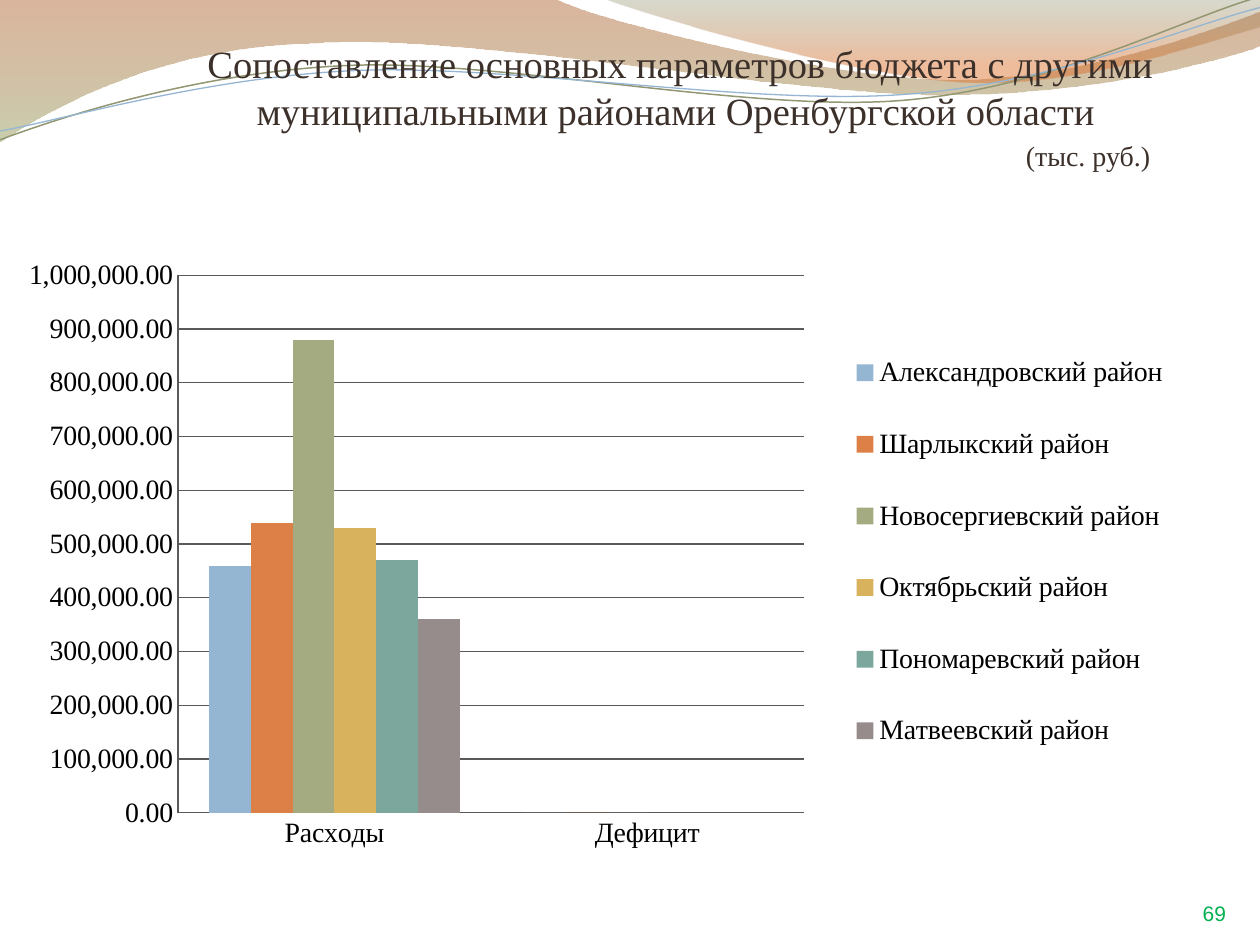
from lxml import etree
from pptx import Presentation
from pptx.chart.data import CategoryChartData
from pptx.dml.color import RGBColor
from pptx.enum.chart import XL_CHART_TYPE, XL_LEGEND_POSITION, XL_TICK_MARK
from pptx.enum.text import MSO_ANCHOR, PP_ALIGN
from pptx.oxml import parse_xml
from pptx.oxml.ns import qn
from pptx.util import Inches, Pt

COLUMN = XL_CHART_TYPE.COLUMN_CLUSTERED
RIGHT = XL_LEGEND_POSITION.RIGHT
NO_TICK = XL_TICK_MARK.NONE
BOTTOM = MSO_ANCHOR.BOTTOM
MID, END = PP_ALIGN.CENTER, PP_ALIGN.RIGHT
SERIF = "Times New Roman"

HEX = {
    "title": "3C302A", "page": "00B050", "text": "000000", "rule": "595959",
    "rust": "AF5C29", "moss": "9DA66B", "sage": "7D835B", "flame": "DD6B24",
    "olive": "929772", "sky": "94B6D2",
}

WAVES = [
    {"start": (0, 0), "segs": [
        (4.4, -0.01), (4.76, 0.17, 6.64, 0.63, 7.58, 0.63),
        (8.53, 0.63, 9.58, 0.26, 10, 0.09), (10.01, 0.36),
        (9.83, 0.44, 8.7, 0.76, 7.46, 0.75), (6.22, 0.75, 3.82, 0.28, 2.57, 0.34),
        (1.29, 0.36, 0.46, 0.83, -0.01, 1.13), (0, 0)],
     "grad": [(0, "rust", 45), (1, "moss", 55)]},
    {"start": (4.79, -0.01), "segs": [
        (5.09, 0.11, 6.82, 0.62, 7.69, 0.65), (8.56, 0.69, 9.61, 0.32, 10, 0.21),
        (10, 0), (4.79, -0.01)],
     "grad": [(0, "sage", 30), (0.8, "flame", 45)]},
    {"start": (0, 1.11), "segs": [
        (0.48, 0.93, 1.58, 0.57, 2.77, 0.52), (3.95, 0.47, 5.93, 0.89, 7.13, 0.8),
        (8.33, 0.71, 9.38, 0.15, 9.98, -0.02)],
     "line": ("olive", 0.85)},
    {"start": (0, 1.04), "segs": [
        (0.47, 0.96, 1.64, 0.61, 2.83, 0.56), (4.03, 0.51, 5.97, 0.84, 7.17, 0.75),
        (8.36, 0.67, 9.41, 0.21, 10, 0.06)],
     "line": ("sky", 0.75)},
]

TITLE = [
    ("Сопоставление основных параметров бюджета с другими "
     "муниципальными районами Оренбургской области ", 22, 26.5, 0),
    ("(тыс. руб.)", 16, 22.7, 6.47),
]
PAGE = "69"
CATS = ["Расходы", "Дефицит"]
ROWS = [
    ("Александровский район", (460000, 0), "94B6D2"),
    ("Шарлыкский район", (540000, 0), "DD8047"),
    ("Новосергиевский район", (880000, 0), "A5AB81"),
    ("Октябрьский район", (530000, None), "D8B25C"),
    ("Пономаревский район", (470000, None), "7BA79D"),
    ("Матвеевский район", (360000, None), "968C8C"),
]
PLOT = {"x": 0.122, "y": 0.03, "w": 0.532, "h": 0.827}
KEY = {"x": 0.679, "y": 0.094, "w": 0.3, "h": 0.723}


def put(item, vals):
    """Set attributes from a dict of format values."""
    for name, val in vals.items():
        setattr(item, name, val)


def paint(font, size, tone, face=SERIF):
    """Set the size, face and colour of a font."""
    put(font, {"size": Pt(size), "name": face, "bold": False})
    font.color.rgb = RGBColor.from_string(HEX[tone])


def place(item, box):
    """Set the place and size of a shape in inches."""
    put(item, dict(zip(("left", "top", "width", "height"), map(Inches, box))))


def bend(shape, segs):
    """Turn the straight steps of six-number segments into cubic curves."""
    steps = list(shape._element.iter(qn("a:lnTo")))
    for step, seg in zip(steps, segs):
        if len(seg) == 2:
            continue
        curve = etree.Element(qn("a:cubicBezTo"))
        for x, y in zip(seg[::2], seg[1::2]):
            etree.SubElement(curve, qn("a:pt"), x=str(Inches(x) - shape.left),
                             y=str(Inches(y) - shape.top))
        step.getparent().replace(step, curve)


def draw_wave(shapes, wave):
    """Draw one filled or stroked wave."""
    pen = shapes.build_freeform(*map(Inches, wave["start"]))
    ends = [tuple(map(Inches, seg[-2:])) for seg in wave["segs"]]
    pen.add_line_segments(ends, close="grad" in wave)
    shape = pen.convert_to_shape()
    bend(shape, wave["segs"])
    shape.shadow.inherit = False
    if "line" in wave:
        tone, width = wave["line"]
        shape.fill.background()
        shape.line.color.rgb = RGBColor.from_string(HEX[tone])
        shape.line.width = Pt(width)
        return
    shape.line.fill.background()
    shape.fill.gradient()
    shape.fill.gradient_angle = 270
    for stop, (pos, tone, _) in zip(shape.fill.gradient_stops, wave["grad"]):
        stop.position = pos
        stop.color.rgb = RGBColor.from_string(HEX[tone])
    marks = list(shape._element.spPr.iter(qn("a:srgbClr")))
    for mark, (_, _, alpha) in zip(marks, wave["grad"]):
        etree.SubElement(mark, qn("a:alpha"), val=str(alpha * 1000))


def lay_out(kind, spots):
    """Return a manual chart layout element."""
    inner = '<c:layoutTarget val="inner"/>' if kind == "inner" else ""
    modes = "".join(f'<c:{k}Mode val="edge"/>' for k in "xy")
    sizes = "".join(f'<c:{k} val="{v}"/>' for k, v in spots.items())
    return parse_xml(
        '<c:layout xmlns:c="http://schemas.openxmlformats.org/drawingml/2006/chart">'
        f"<c:manualLayout>{inner}{modes}{sizes}</c:manualLayout></c:layout>")


def add_bars(shapes):
    """Add the column chart with its axes and legend."""
    data = CategoryChartData(number_format="#,##0.00")
    data.categories = CATS
    for name, vals, _ in ROWS:
        data.add_series(name, vals)
    box = map(Inches, (0.23, 2.03, 9.38, 5.16))
    chart = shapes.add_chart(COLUMN, *box, data).chart
    put(chart, {"has_title": False, "has_legend": True})
    paint(chart.font, 18, "text", "TeX Gyre Pagella")
    plot = chart.plots[0]
    put(plot, {"gap_width": 150, "overlap": 0, "vary_by_categories": False})
    for bar, (_, _, tone) in zip(plot.series, ROWS):
        bar.format.fill.solid()
        bar.format.fill.fore_color.rgb = RGBColor.from_string(tone)
        bar.invert_if_negative = False
    cat, val = chart.category_axis, chart.value_axis
    put(val, {"minimum_scale": 0, "maximum_scale": 1000000, "major_unit": 100000,
              "has_major_gridlines": True})
    put(val.tick_labels, {"number_format": "#,##0.00",
                          "number_format_is_linked": False})
    for axis in (cat, val):
        put(axis, {"major_tick_mark": NO_TICK, "minor_tick_mark": NO_TICK})
        paint(axis.tick_labels.font, 16, "text")
    for rule in (cat.format, val.format, val.major_gridlines.format):
        rule.line.color.rgb = RGBColor.from_string(HEX["rule"])
        rule.line.width = Pt(0.75)
    key = chart.legend
    put(key, {"position": RIGHT, "include_in_layout": False})
    paint(key.font, 16, "text")
    for root, kind, spots, spot in (
            (plot._element.getparent(), "inner", PLOT, 0),
            (key._element, "outer", KEY, 1)):
        for old in root.findall(qn("c:layout")):
            root.remove(old)
        root.insert(spot, lay_out(kind, spots))


def fill_title(title):
    """Place and format the title."""
    place(title, (1.3, 0.21, 8.2, 1.17))
    frame = title.text_frame
    put(frame, {"margin_left": 0, "margin_right": 0, "margin_top": Inches(0.05),
                "margin_bottom": Inches(0.01), "vertical_anchor": BOTTOM,
                "word_wrap": True})
    frame.text = "\n".join(row[0] for row in TITLE)
    for para, (_, size, pitch, dent) in zip(frame.paragraphs, TITLE):
        put(para, {"alignment": MID, "line_spacing": Pt(pitch),
                   "space_before": Pt(0)})
        para._p.get_or_add_pPr().set("marL", str(Inches(dent)))
        paint(para.runs[0].font, size, "title")


def add_page(shapes):
    """Add the page number."""
    frame = shapes.add_textbox(*map(Inches, (7.73, 6.95, 2, 0.4))).text_frame
    put(frame, {"margin_left": 0, "margin_right": 0, "margin_top": 0,
                "margin_bottom": 0, "vertical_anchor": BOTTOM, "word_wrap": True})
    frame.text = PAGE
    frame.paragraphs[0].alignment = END
    paint(frame.paragraphs[0].runs[0].font, 12, "page", "Arial")


def main():
    """Build and save the slide."""
    deck = Presentation()
    put(deck, {"slide_width": Inches(10), "slide_height": Inches(7.5)})
    shapes = deck.slides.add_slide(deck.slide_layouts[5]).shapes
    title = shapes.title
    for wave in WAVES:
        draw_wave(shapes, wave)
    shapes._spTree.append(title._element)
    fill_title(title)
    add_bars(shapes)
    add_page(shapes)
    deck.save("out.pptx")


if __name__ == "__main__":
    main()
